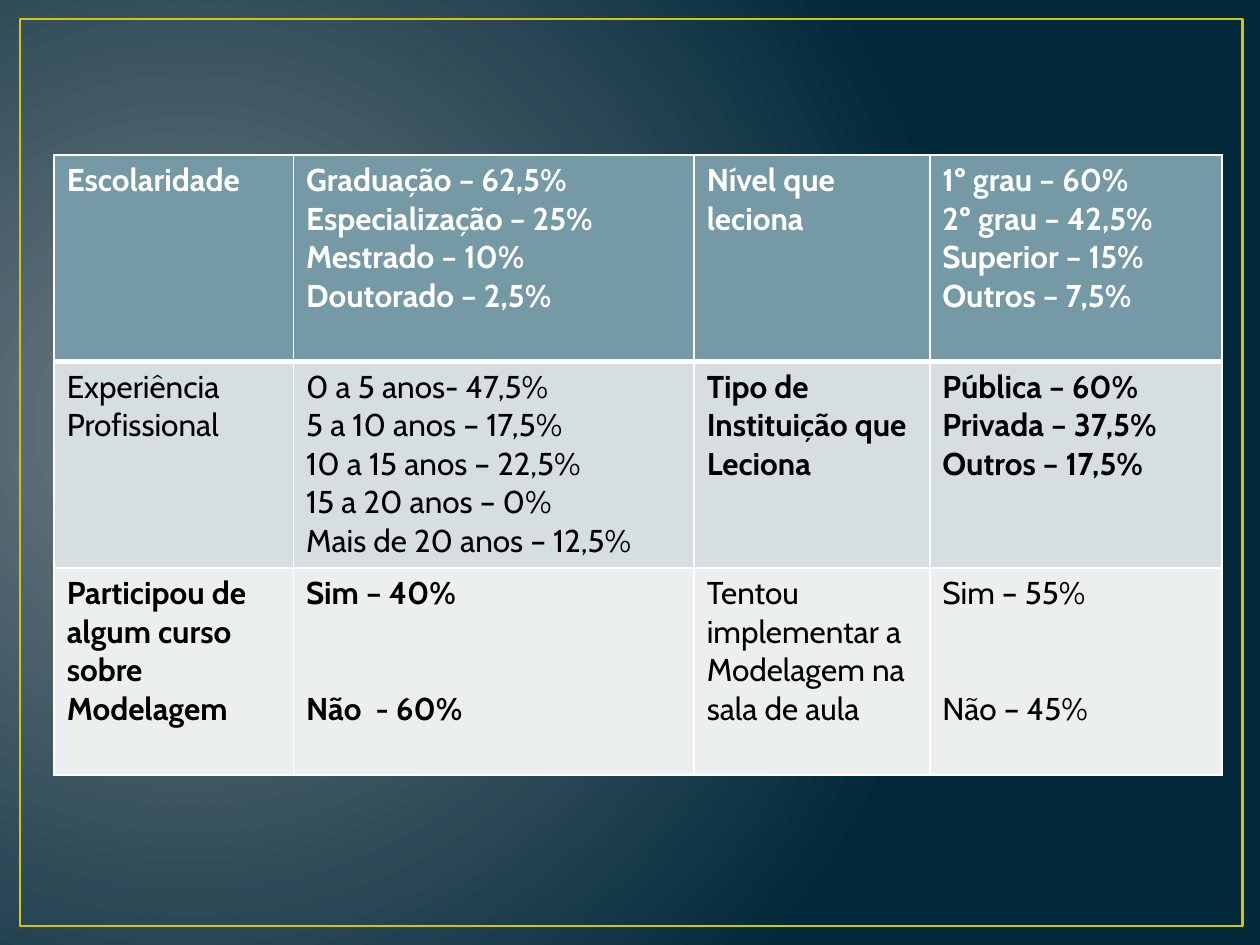
import lxml.etree
import pptx
import pptx.dml.color
import pptx.enum.shapes
import pptx.oxml
import pptx.oxml.ns
import pptx.util

Pt = pptx.util.Pt
qn = pptx.oxml.ns.qn

COLORS = {
    "glow": "717C84", "night": "01293A", "frame": "CFC60D",
    "white": "FFFFFF", "black": "000000",
    "header": "759AA5", "band": "D6DEE1", "light": "ECEFF0",
}
FONT = "Cabin"
ANSWER_GAP = 44
SURVEY = [
    {"fill": "header", "text": "white", "top": 1, "bottom": 3, "cells": [
        (True, 0, ["Escolaridade"]),
        (True, 0, ["Graduação – 62,5%", "Especialização – 25%",
                   "Mestrado – 10%", "Doutorado – 2,5%"]),
        (True, 0, ["Nível que leciona"]),
        (True, 0, ["1º grau – 60%", "2º grau – 42,5%",
                   "Superior – 15%", "Outros – 7,5%"]),
    ]},
    {"fill": "band", "text": "black", "top": 3, "bottom": 1, "cells": [
        (False, 0, ["Experiência", "Profissional"]),
        (False, 0, ["0 a 5 anos- 47,5%", "5 a 10 anos – 17,5%",
                    "10 a 15 anos – 22,5%", "15 a 20 anos – 0%",
                    "Mais de 20 anos – 12,5%"]),
        (True, 0, ["Tipo de", "Instituição que", "Leciona"]),
        (True, 0, ["Pública – 60%", "Privada – 37,5%", "Outros – 17,5%"]),
    ]},
    {"fill": "light", "text": "black", "top": 1, "bottom": 1, "cells": [
        (True, 0, ["Participou de algum curso sobre", "Modelagem"]),
        (True, ANSWER_GAP, ["Sim – 40%", "Não  - 60%"]),
        (False, 0, ["Tentou implementar a Modelagem na sala de aula"]),
        (False, ANSWER_GAP, ["Sim – 55%", "Não – 45%"]),
    ]},
]
COLUMN_WIDTHS = [136.8, 228.96, 134.64, 167.04]
ROW_HEIGHT = 118.08
TABLE_LEFT, TABLE_TOP = 30.96, 88.56


def rgb(name):
    return pptx.dml.color.RGBColor.from_string(COLORS[name])


def paint_background(slide):
    fill = slide.background.fill
    fill.gradient()
    for stop, name in zip(fill.gradient_stops, ("glow", "night")):
        stop.color.rgb = rgb(name)
    linear = slide.element.find(".//" + qn("a:lin"))
    circle = pptx.oxml.parse_xml(
        f'<a:path {pptx.oxml.ns.nsdecls("a")} path="circle">'
        '<a:fillToRect l="15000" t="50000" r="85000" b="60000"/></a:path>')
    linear.getparent().replace(linear, circle)


def add_frame(slide):
    frame = slide.shapes.add_shape(
        pptx.enum.shapes.MSO_SHAPE.RECTANGLE,
        Pt(11.52), Pt(10.8), Pt(698.4), Pt(518.4))
    frame.shadow.inherit = False
    frame.fill.background()
    frame.line.color.rgb = rgb("frame")
    frame.line.width = Pt(1.5)


def set_borders(cell, top, bottom):
    properties = cell._tc.get_or_add_tcPr()
    sides = [("lnL", 1), ("lnR", 1), ("lnT", top), ("lnB", bottom)]
    for position, (side, width) in enumerate(sides):
        line = lxml.etree.Element(qn("a:" + side), w=str(Pt(width)))
        solid = lxml.etree.SubElement(line, qn("a:solidFill"))
        lxml.etree.SubElement(solid, qn("a:srgbClr"), val=COLORS["white"])
        properties.insert(position, line)


def write_lines(cell, lines, bold, gap, color):
    for index, text in enumerate(lines):
        frame = cell.text_frame
        paragraph = frame.add_paragraph() if index else frame.paragraphs[0]
        if index and gap:
            paragraph.space_before = Pt(gap)
        run = paragraph.add_run()
        run.text = text
        run.font.name = FONT
        run.font.size = Pt(18)
        run.font.bold = bold
        run.font.color.rgb = rgb(color)


def add_survey(slide):
    table = slide.shapes.add_table(
        len(SURVEY), len(COLUMN_WIDTHS), Pt(TABLE_LEFT), Pt(TABLE_TOP),
        Pt(sum(COLUMN_WIDTHS)), Pt(ROW_HEIGHT * len(SURVEY))).table
    for column, width in zip(table.columns, COLUMN_WIDTHS):
        column.width = Pt(width)
    for row, content in zip(table.rows, SURVEY):
        row.height = Pt(ROW_HEIGHT)
        for cell, (bold, gap, lines) in zip(row.cells, content["cells"]):
            cell.fill.solid()
            cell.fill.fore_color.rgb = rgb(content["fill"])
            set_borders(cell, content["top"], content["bottom"])
            write_lines(cell, lines, bold, gap, content["text"])


def main():
    deck = pptx.Presentation()
    deck.slide_width, deck.slide_height = Pt(720), Pt(540)
    slide = deck.slides.add_slide(deck.slide_layouts[6])
    paint_background(slide)
    add_frame(slide)
    add_survey(slide)
    deck.save("out.pptx")


if __name__ == "__main__":
    main()
